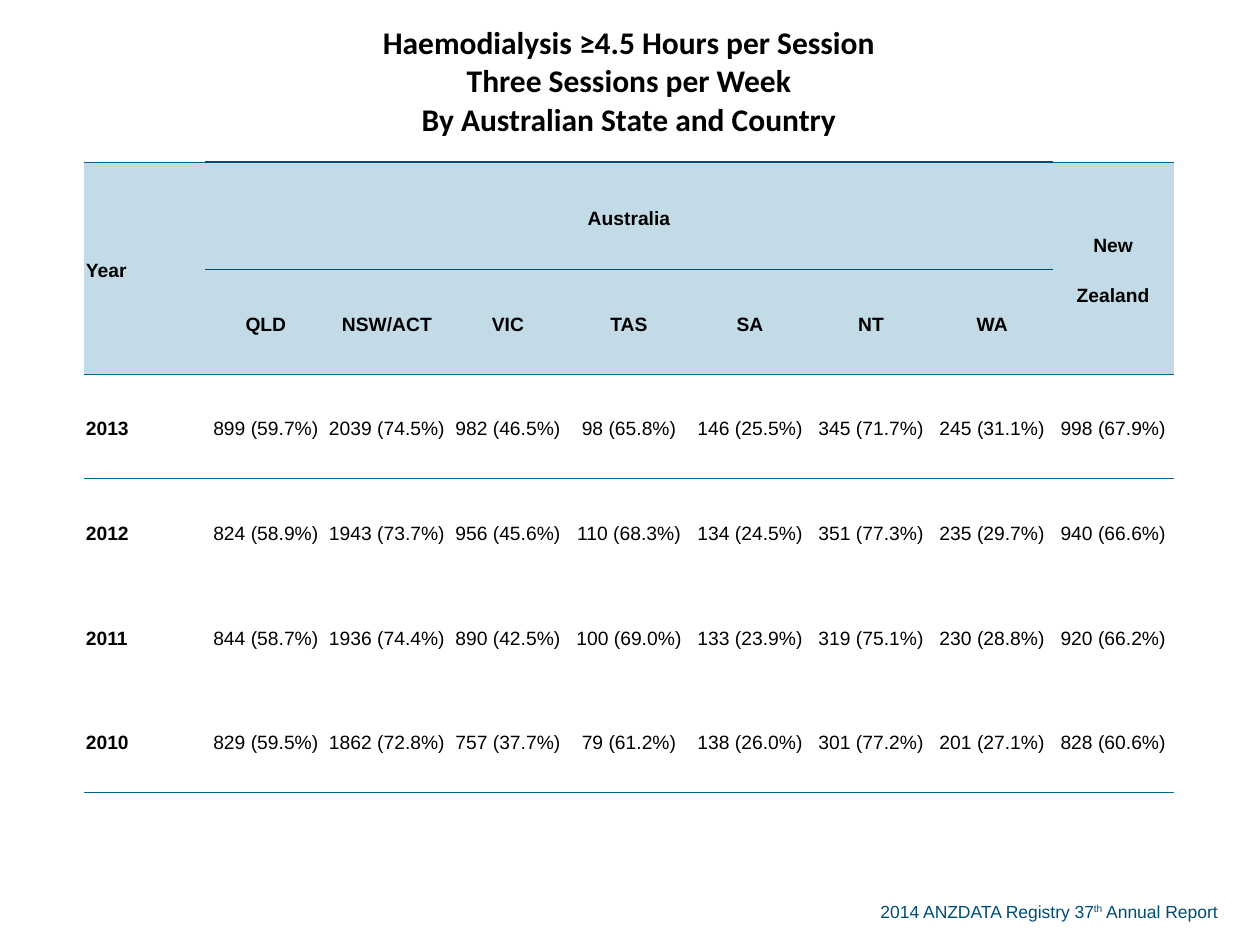
"""Build a slide tabulating long haemodialysis sessions by state and country."""
import pptx
import pptx.dml.color
import pptx.enum.text
import pptx.oxml
import pptx.oxml.ns
import pptx.util

Cm, Pt = pptx.util.Cm, pptx.util.Pt
RGB = pptx.dml.color.RGBColor.from_string
PP_ALIGN = pptx.enum.text.PP_ALIGN

COLORS = {"text": "000000", "band": "C2DBE7", "rule": "006699", "navy": "004D73"}
TITLE = "Haemodialysis ≥4.5 Hours per Session\vThree Sessions per Week\vBy Australian State and Country"
GROUPS = ["Year", "Australia", "", "", "", "", "", "", "New\nZealand"]
STATES = ["", "QLD", "NSW/ACT", "VIC", "TAS", "SA", "NT", "WA", ""]
DATA = [
    ["2013", "899 (59.7%)", "2039 (74.5%)", "982 (46.5%)", "98 (65.8%)",
     "146 (25.5%)", "345 (71.7%)", "245 (31.1%)", "998 (67.9%)"],
    ["2012", "824 (58.9%)", "1943 (73.7%)", "956 (45.6%)", "110 (68.3%)",
     "134 (24.5%)", "351 (77.3%)", "235 (29.7%)", "940 (66.6%)"],
    ["2011", "844 (58.7%)", "1936 (74.4%)", "890 (42.5%)", "100 (69.0%)",
     "133 (23.9%)", "319 (75.1%)", "230 (28.8%)", "920 (66.2%)"],
    ["2010", "829 (59.5%)", "1862 (72.8%)", "757 (37.7%)", "79 (61.2%)",
     "138 (26.0%)", "301 (77.2%)", "201 (27.1%)", "828 (60.6%)"],
]
FOOTER = [("2014 ANZDATA Registry 37", 0), ("th", 30000), (" Annual Report", 0)]
ROWS = [[TITLE] + [""] * 8, GROUPS, STATES] + DATA
MERGES = [(0, 0, 0, 8), (1, 0, 2, 0), (1, 1, 1, 7), (1, 8, 2, 8)]
HEIGHTS = [3.27, 2.16] + [2.11] * 5
COL_WIDTH = 2.44
NO_STYLE = "{2D5ABB26-0587-4C30-8999-92F81FD0307C}"


def add_border(cell, side, color, width):
    ns = pptx.oxml.ns.nsdecls("a")
    cell._tc.get_or_add_tcPr().append(pptx.oxml.parse_xml(
        f'<a:ln{side} {ns} w="{Pt(width)}"><a:solidFill>'
        f'<a:srgbClr val="{COLORS[color]}"/></a:solidFill></a:ln{side}>'))


def add_borders(cell, row, col):
    edge = col in (0, len(GROUPS) - 1)
    if row == 1 and not edge:
        add_border(cell, "T", "navy", 1)
    elif row in (1, 3):
        add_border(cell, "T", "rule", 0.5)
    if row in (0, 2, len(ROWS) - 1) or (row == 1 and edge):
        add_border(cell, "B", "rule", 0.5)


def format_cell(cell, row, col):
    cell.margin_left = cell.margin_top = cell.margin_right = Cm(0.03)
    cell.margin_bottom = 0
    cell.vertical_anchor = pptx.enum.text.MSO_ANCHOR.MIDDLE
    add_borders(cell, row, col)
    if row in (1, 2):
        cell.fill.solid()
        cell.fill.fore_color.rgb = RGB(COLORS["band"])
    else:
        cell.fill.background()
    for p in cell.text_frame.paragraphs:
        p.alignment = PP_ALIGN.LEFT if row and col == 0 else PP_ALIGN.CENTER
        if row:
            p.line_spacing, p.space_after = 1.19, Pt(14)
        p.font.name = "Arial" if row else "Calibri"
        p.font.size = Pt(11 if row else 18)
        p.font.bold = row < 3 or col == 0
        p.font.color.rgb = RGB(COLORS["text"])


def add_sessions_table(s):
    frame = s.shapes.add_table(len(ROWS), len(GROUPS), Cm(1.7), 0,
                               Cm(COL_WIDTH * len(GROUPS)), Cm(sum(HEIGHTS)))
    table = frame.table
    table.first_row = table.horz_banding = False
    table._tbl.tblPr.find(pptx.oxml.ns.qn("a:tableStyleId")).text = NO_STYLE
    for column in table.columns:
        column.width = Cm(COL_WIDTH)
    for row, values in enumerate(ROWS):
        table.rows[row].height = Cm(HEIGHTS[row])
        for col, value in enumerate(values):
            cell = table.cell(row, col)
            cell.text_frame.text = value
            format_cell(cell, row, col)
    for top, left, bottom, right in MERGES:
        table.cell(top, left).merge(table.cell(bottom, right))


def add_footer(s):
    tf = s.shapes.add_textbox(Cm(17.5), Cm(18.03), Cm(7.6), Cm(0.68)).text_frame
    tf.word_wrap = True
    tf.auto_size = pptx.enum.text.MSO_AUTO_SIZE.SHAPE_TO_FIT_TEXT
    p = tf.paragraphs[0]
    p.font.name, p.font.size = "Arial", Pt(10)
    p.font.color.rgb = RGB(COLORS["navy"])
    for text, baseline in FOOTER:
        r = p.add_run()
        r.text = text
        if baseline:
            r._r.get_or_add_rPr().set("baseline", str(baseline))


def main():
    prs = pptx.Presentation()
    prs.slide_width, prs.slide_height = Cm(25.4), Cm(19.05)
    s = prs.slides.add_slide(prs.slide_layouts[6])
    add_footer(s)
    add_sessions_table(s)
    prs.save("out.pptx")


if __name__ == "__main__":
    main()
